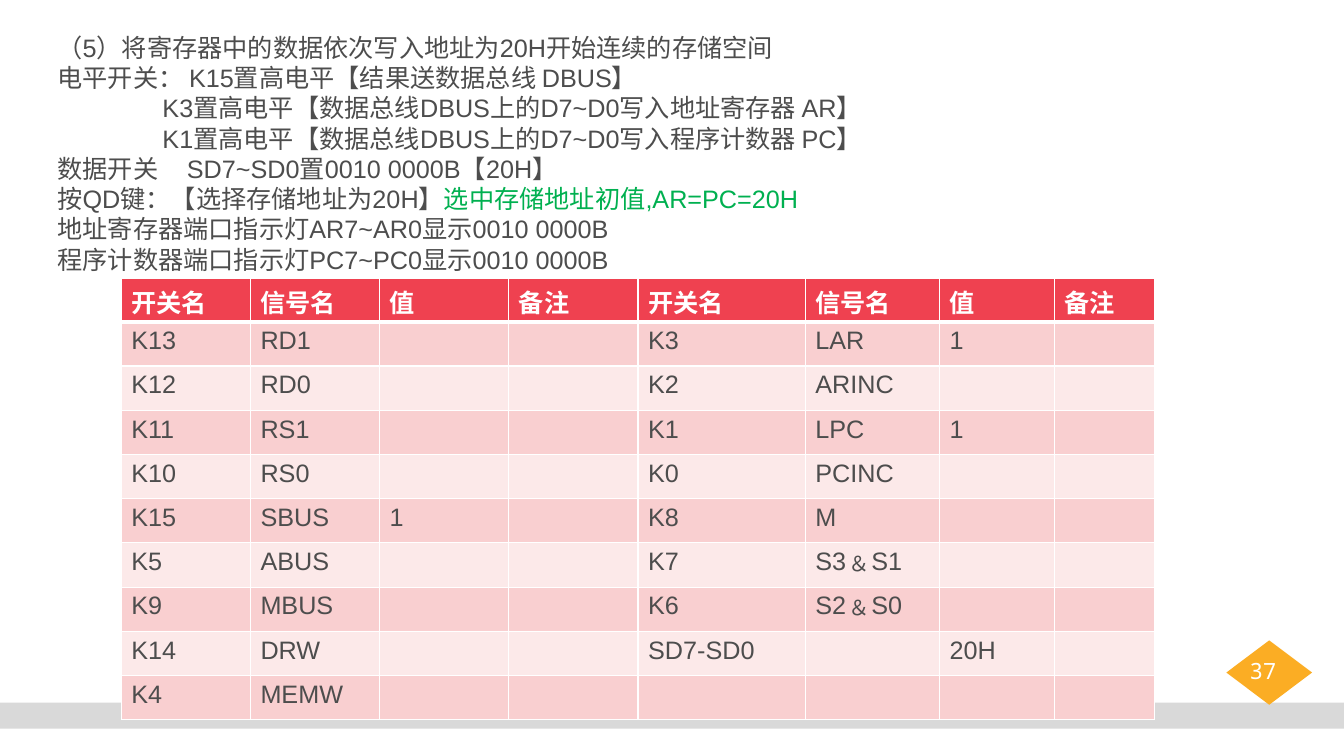
from dataclasses import dataclass

from lxml.etree import SubElement
from pptx import Presentation
from pptx.dml.color import RGBColor
from pptx.enum.shapes import MSO_SHAPE as Preset
from pptx.enum.text import PP_ALIGN as Align
from pptx.oxml.ns import qn
from pptx.util import Pt

WHITE = RGBColor(0xFF, 0xFF, 0xFF)
INK = RGBColor(0x4D, 0x4D, 0x4D)
GREEN = RGBColor(0x00, 0xB0, 0x50)
GREY = RGBColor(0xD9, 0xD9, 0xD9)
ORANGE = RGBColor(0xFB, 0xAD, 0x24)
RED = RGBColor(0xEF, 0x41, 0x50)
PINK = RGBColor(0xF9, 0xCF, 0xD0)
PALE_PINK = RGBColor(0xFC, 0xE9, 0xE9)


@dataclass(frozen=True)
class Step:
    text: str
    highlight: str = ""
    indent: float = 0
    tab: float = 0


@dataclass(frozen=True)
class Block:
    preset: Preset
    left: float
    top: float
    width: float
    height: float
    color: RGBColor


STEPS = [
    Step("（5）将寄存器中的数据依次写入地址为20H开始连续的存储空间"),
    Step("电平开关： K15置高电平【结果送数据总线 DBUS】"),
    Step("K3置高电平【数据总线DBUS上的D7~D0写入地址寄存器 AR】", indent=75),
    Step("K1置高电平【数据总线DBUS上的D7~D0写入程序计数器 PC】", indent=75),
    Step("数据开关\tSD7~SD0置0010 0000B【20H】", tab=92.5),
    Step("按QD键：【选择存储地址为20H】", highlight="选中存储地址初值,AR=PC=20H"),
    Step("地址寄存器端口指示灯AR7~AR0显示0010 0000B"),
    Step("程序计数器端口指示灯PC7~PC0显示0010 0000B"),
]

BLOCKS = [
    Block(Preset.RECTANGLE, 0, 502, 960, 18.6, GREY),
    Block(Preset.FLOWCHART_DECISION, 876, 457.4, 61.2, 46, ORANGE),
]

COLUMN_WIDTHS = [92.3] * 4 + [119.5, 95.8, 82, 71.5]
HEADER_HEIGHT, ROW_HEIGHT = 31, 31.6
SWITCHES = [
    ["开关名", "信号名", "值", "备注"] * 2,
    ["K13", "RD1", "", "", "K3", "LAR", "1", ""],
    ["K12", "RD0", "", "", "K2", "ARINC", "", ""],
    ["K11", "RS1", "", "", "K1", "LPC", "1", ""],
    ["K10", "RS0", "", "", "K0", "PCINC", "", ""],
    ["K15", "SBUS", "1", "", "K8", "M", "", ""],
    ["K5", "ABUS", "", "", "K7", "S3﹠S1", "", ""],
    ["K9", "MBUS", "", "", "K6", "S2﹠S0", "", ""],
    ["K14", "DRW", "", "", "SD7-SD0", "", "20H", ""],
    ["K4", "MEMW", "", "", "", "", "", ""],
]


def write(paragraph, text: str, *, size: float = 18, color: RGBColor = INK,
          bold: bool = False, font_name: str = "Arial") -> None:
    run = paragraph.add_run()
    run.text = text
    run.font.size = Pt(size)
    run.font.name = font_name
    run.font.bold = bold
    run.font.color.rgb = color


def add_block(slide, block: Block) -> None:
    shape = slide.shapes.add_shape(
        block.preset, Pt(block.left), Pt(block.top), Pt(block.width), Pt(block.height))
    shape.shadow.inherit = False
    shape.fill.solid()
    shape.fill.fore_color.rgb = block.color
    shape.line.fill.background()


def add_text_frame(slide, left: float, top: float, width: float, height: float):
    box = slide.shapes.add_textbox(Pt(left), Pt(top), Pt(width), Pt(height))
    box.text_frame.word_wrap = True
    return box.text_frame


def add_steps(slide) -> None:
    frame = add_text_frame(slide, 34, 19.5, 892, 181.5)
    for index, step in enumerate(STEPS):
        paragraph = frame.add_paragraph() if index else frame.paragraphs[0]
        properties = paragraph._p.get_or_add_pPr()
        if step.indent:
            properties.set("marL", str(Pt(step.indent)))
        if step.tab:
            tabs = SubElement(properties, qn("a:tabLst"))
            SubElement(tabs, qn("a:tab"), pos=str(Pt(step.tab)), algn="l")
        write(paragraph, step.text)
        if step.highlight:
            write(paragraph, step.highlight, color=GREEN)


def set_borders(cell, **widths: float) -> None:
    properties = cell._tc.get_or_add_tcPr()
    for side in ("L", "R", "T", "B"):
        line = SubElement(properties, qn(f"a:ln{side}"), w=str(Pt(widths.get(side, 1))))
        fill = SubElement(line, qn("a:solidFill"))
        SubElement(fill, qn("a:srgbClr"), val=str(WHITE))


def add_switch_table(slide) -> None:
    height = HEADER_HEIGHT + ROW_HEIGHT * (len(SWITCHES) - 1)
    table = slide.shapes.add_table(
        len(SWITCHES), len(COLUMN_WIDTHS),
        Pt(86.6), Pt(198.9), Pt(sum(COLUMN_WIDTHS)), Pt(height)).table
    table.horz_banding = False
    for column, width in zip(table.columns, COLUMN_WIDTHS):
        column.width = Pt(width)
    for row_index, values in enumerate(SWITCHES):
        header = row_index == 0
        table.rows[row_index].height = Pt(HEADER_HEIGHT if header else ROW_HEIGHT)
        band = RED if header else PINK if row_index % 2 else PALE_PINK
        for column_index, value in enumerate(values):
            cell = table.cell(row_index, column_index)
            set_borders(cell, T=3 if row_index == 1 else 1, B=3 if header else 1)
            cell.fill.solid()
            cell.fill.fore_color.rgb = band
            if value:
                write(cell.text_frame.paragraphs[0], value,
                      color=WHITE if header else INK, bold=header)


def add_page_number(slide) -> None:
    paragraph = add_text_frame(slide, 877, 465.8, 50.4, 26.6).paragraphs[0]
    paragraph.alignment = Align.CENTER
    write(paragraph, "37", size=16, color=WHITE, font_name="Noto Sans Mono")


def main() -> None:
    presentation = Presentation()
    presentation.slide_width, presentation.slide_height = Pt(960), Pt(540)
    slide = presentation.slides.add_slide(presentation.slide_layouts[6])
    for block in BLOCKS:
        add_block(slide, block)
    add_page_number(slide)
    add_steps(slide)
    add_switch_table(slide)
    presentation.save("out.pptx")


if __name__ == "__main__":
    main()
